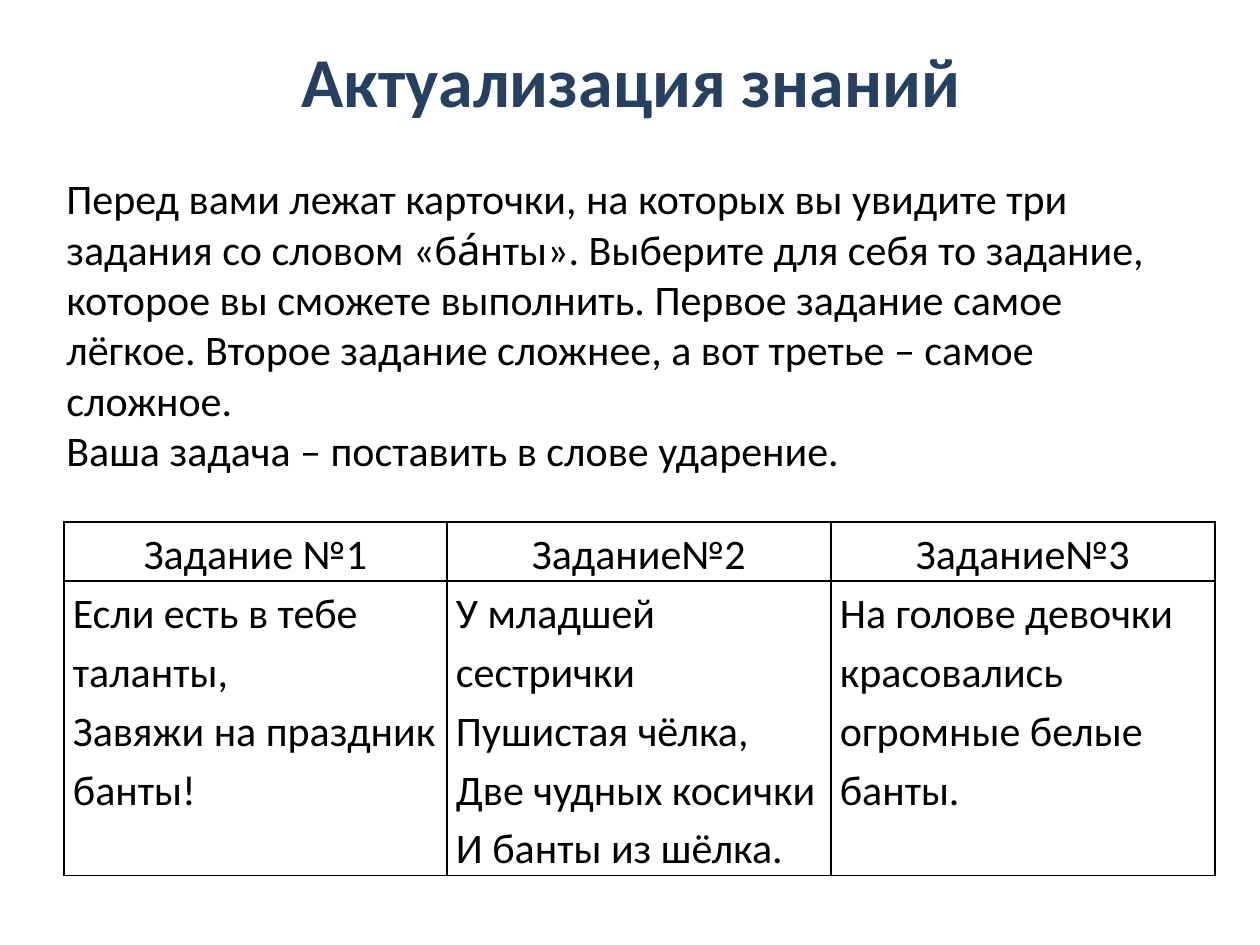
from lxml import etree
from pptx import Presentation
from pptx import util as u
from pptx.dml.color import RGBColor
from pptx.enum import shapes, text
from pptx.oxml.ns import qn

PX_PER_INCH = 126
COLORS = {"title": "254061", "ink": "000000", "paper": "FFFFFF"}

INTRO = [
    "Перед вами лежат карточки, на которых вы увидите три задания со словом "
    "«ба́нты». Выберите для себя то задание, которое вы сможете выполнить. "
    "Первое задание самое лёгкое. Второе задание сложнее, а вот третье – "
    "самое сложное.",
    "Ваша задача – поставить в слове ударение.",
]
TASKS = {
    "Задание №1": ["Если есть в тебе таланты,", "Завяжи на праздник банты!"],
    "Задание№2": ["У младшей сестрички", "Пушистая чёлка,",
                  "Две чудных косички", "И банты из шёлка."],
    "Задание№3": ["На голове девочки красовались огромные белые банты."],
}


def px(n):
    return u.Emu(round(n * 914400 / PX_PER_INCH))


def rgb(name):
    return RGBColor.from_string(COLORS[name])


class SlideBuilder:
    font = "Calibri"
    body_size = 24

    def __init__(self, slide):
        self.slide = slide
        background = slide.background.fill
        background.solid()
        background.fore_color.rgb = rgb("paper")

    def add_lines(self, frame, lines, align=text.PP_ALIGN.LEFT, size=body_size,
                  color="ink", bold=False, spacing=1.0):
        frame.word_wrap = True
        for i, line in enumerate(lines):
            paragraph = frame.paragraphs[0] if i == 0 else frame.add_paragraph()
            paragraph.alignment = align
            paragraph.line_spacing = spacing
            run = paragraph.add_run()
            run.text = line
            run.font.name = self.font
            run.font.size = u.Pt(size)
            run.font.bold = bold
            run.font.color.rgb = rgb(color)

    def title(self, box, line):
        frame = self.slide.shapes.add_textbox(*map(px, box)).text_frame
        frame.vertical_anchor = text.MSO_ANCHOR.MIDDLE
        self.add_lines(frame, [line], text.PP_ALIGN.CENTER, 40, "title", bold=True)

    def panel(self, box, lines):
        panel = self.slide.shapes.add_shape(
            shapes.MSO_SHAPE.RECTANGLE, *map(px, box))
        panel.shadow.inherit = False
        panel.fill.solid()
        panel.fill.fore_color.rgb = rgb("paper")
        panel.line.fill.background()
        frame = panel.text_frame
        frame.vertical_anchor = text.MSO_ANCHOR.MIDDLE
        self.add_lines(frame, lines)
        frame.auto_size = text.MSO_AUTO_SIZE.SHAPE_TO_FIT_TEXT

    def border(self, cell):
        """Draw a 1 pt line on all four sides; borders must precede the fill."""
        props = cell._tc.get_or_add_tcPr()
        for i, side in enumerate(("a:lnL", "a:lnR", "a:lnT", "a:lnB")):
            line = etree.Element(qn(side), w=str(int(u.Pt(1))))
            fill = etree.SubElement(line, qn("a:solidFill"))
            etree.SubElement(fill, qn("a:srgbClr"), val=COLORS["ink"])
            props.insert(i, line)

    def task_table(self, left, top, widths, heights, tasks):
        table = self.slide.shapes.add_table(
            len(heights), len(widths), px(left), px(top),
            px(sum(widths)), px(sum(heights))).table
        table.first_row = table.horz_banding = False
        for row, height in zip(table.rows, heights):
            row.height = px(height)
        for c, (heading, lines) in enumerate(tasks.items()):
            table.columns[c].width = px(widths[c])
            rows = (([heading], text.PP_ALIGN.CENTER, text.MSO_ANCHOR.MIDDLE),
                    (lines, text.PP_ALIGN.LEFT, text.MSO_ANCHOR.TOP))
            for r, (content, align, anchor) in enumerate(rows):
                cell = table.cell(r, c)
                cell.margin_left = cell.margin_right = px(9)
                cell.margin_top = cell.margin_bottom = 0
                cell.vertical_anchor = anchor
                cell.fill.background()
                self.border(cell)
                self.add_lines(cell.text_frame, content, align, spacing=1.15)


def main():
    deck = Presentation()
    deck.slide_width, deck.slide_height = px(1260), px(945)
    builder = SlideBuilder(deck.slides.add_slide(deck.slide_layouts[6]))
    builder.task_table(64, 522, [383, 384, 384], [58, 294], TASKS)
    builder.panel((54, 165, 1145, 318), INTRO)
    builder.title((64, 0, 1134, 158), "Актуализация знаний")
    deck.save("out.pptx")


if __name__ == "__main__":
    main()
